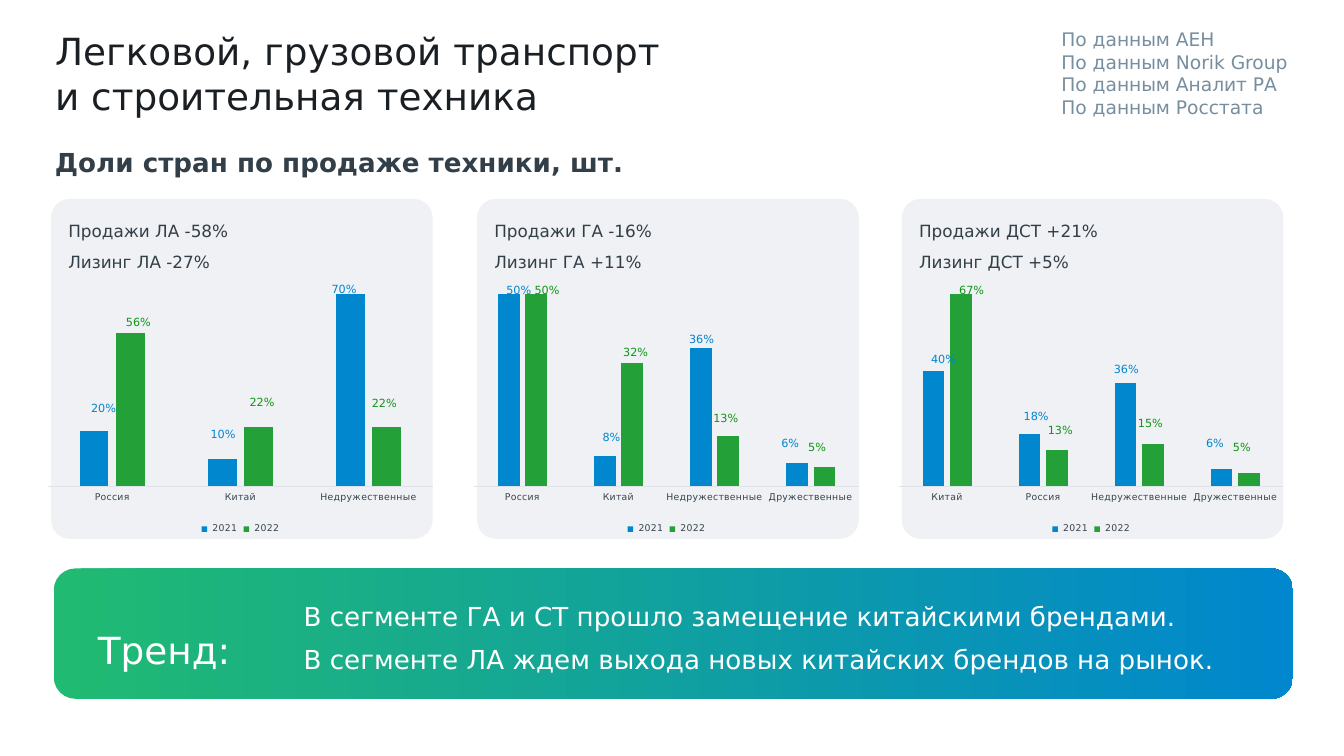
from dataclasses import dataclass

from lxml.etree import SubElement
from pptx import Presentation
from pptx.chart.data import CategoryChartData
from pptx.dml.color import RGBColor
from pptx.enum.chart import XL_CHART_TYPE, XL_LEGEND_POSITION, XL_TICK_LABEL_POSITION, XL_TICK_MARK
from pptx.enum.shapes import MSO_SHAPE
from pptx.enum.text import MSO_AUTO_SIZE, PP_ALIGN
from pptx.oxml.ns import qn
from pptx.util import Inches, Pt


@dataclass(frozen=True)
class Theme:
    font: str = "DejaVu Sans"
    chart_font: str = "Calibri"
    title: str = "1A1F24"
    body: str = "333F48"
    source: str = "778E9F"
    axis_text: str = "37444D"
    axis_line: str = "DDE3E7"
    panel: str = "EFF1F4"
    white: str = "FFFFFF"
    gradient: tuple = ("21BA72", "0087CD")
    bars: tuple = ("0087CD", "24A038")
    labels: tuple = ("0386CD", "119417")
    title_size: int = 20
    heading_size: int = 14
    source_size: int = 10
    chart_size: int = 10
    panel_size: int = 9
    label_size: int = 6
    axis_size: int = 5


@dataclass(frozen=True)
class Panel:
    left: float
    lines: tuple
    categories: tuple
    values: tuple
    shares: tuple
    label_tops: tuple
    chart_top: float
    columns: tuple


THEME = Theme()
YEARS = ("2021", "2022")
PANEL_TOP, PANEL_WIDTH, PANEL_HEIGHT = 1.48, 2.84, 2.53
CHART_WIDTH, CHART_BOTTOM = 2.98, 4.02
PLOT_TOP, PLOT_BASE = 2.19, 3.62
THREE_COLUMNS = ((0.39, 0.65, 0.73), (1.28, 1.57, 0.73), (2.18, 2.48, 0.73))
FOUR_COLUMNS = ((0.31, 0.52, 0.4), (1.0, 1.18, 0.73), (1.67, 1.85, 0.73), (2.33, 2.53, 0.4))

PANELS = (
    Panel(0.38, ("Продажи ЛА -58%", "Лизинг ЛА -27%"),
          ("Россия", "Китай", "Недружественные"),
          ((29, 14, 100), (80, 31, 31)),
          (("20%", "10%", "70%"), ("56%", "22%", "22%")),
          ((2.94, 3.13, 2.05), (2.3, 2.89, 2.9)), 1.96, THREE_COLUMNS),
    Panel(3.55, ("Продажи ГА -16%", "Лизинг ГА +11%"),
          ("Россия", "Китай", "Недружественные", "Дружественные"),
          ((100, 16, 72, 12), (100, 64, 26, 10)),
          (("50%", "8%", "36%", "6%"), ("50%", "32%", "13%", "5%")),
          ((2.06, 3.15, 2.42, 3.2), (2.06, 2.52, 3.01, 3.23)), 1.86, FOUR_COLUMNS),
    Panel(6.71, ("Продажи ДСТ +21%", "Лизинг ДСТ +5%"),
          ("Китай", "Россия", "Недружественные", "Дружественные"),
          ((60, 27, 54, 9), (100, 19, 22, 7)),
          (("40%", "18%", "36%", "6%"), ("67%", "13%", "15%", "5%")),
          ((2.57, 3.0, 2.65, 3.2), (2.06, 3.1, 3.05, 3.23)), 1.86, FOUR_COLUMNS),
)


def color(value):
    return RGBColor.from_string(value)


def style_font(font, size, value, name=THEME.font, bold=False):
    font.name, font.size, font.bold = name, Pt(size), bold
    font.color.rgb = color(value)


def add_text(slide, box, lines, size, value, bold=False, align=PP_ALIGN.LEFT,
             spacing=None, before=None, insets=None, soft_breaks=False):
    shape = slide.shapes.add_textbox(*map(Inches, box))
    frame = shape.text_frame
    frame.word_wrap = True
    frame.auto_size = MSO_AUTO_SIZE.SHAPE_TO_FIT_TEXT
    if insets:
        frame.margin_left = frame.margin_right = Inches(insets[0])
        frame.margin_top = frame.margin_bottom = Inches(insets[1])
    paragraph = frame.paragraphs[0]
    for index, line in enumerate(lines):
        if index and soft_breaks:
            paragraph.add_line_break()
        elif index:
            paragraph = frame.add_paragraph()
        paragraph.alignment = align
        if spacing:
            paragraph.line_spacing = spacing
        if before:
            paragraph.space_before = Pt(before)
        run = paragraph.add_run()
        run.text = line
        style_font(run.font, size, value, bold=bold)


def add_rounded(slide, box, fill, adjustment=None):
    shape = slide.shapes.add_shape(MSO_SHAPE.ROUNDED_RECTANGLE, *map(Inches, box))
    shape.shadow.inherit = False
    shape.line.fill.background()
    if adjustment:
        shape.adjustments[0] = adjustment
    if isinstance(fill, tuple):
        shape.fill.gradient()
        shape.fill.gradient_angle = 0
        for stop, value in zip(shape.fill.gradient_stops, fill):
            stop.color.rgb = color(value)
    else:
        shape.fill.solid()
        shape.fill.fore_color.rgb = color(fill)


def set_plot_area(chart, top, height):
    plot_area = chart._chartSpace.chart.plotArea
    layout = plot_area.find(qn("c:layout"))
    if layout is None:
        layout = SubElement(plot_area, qn("c:layout"))
        plot_area.insert(0, layout)
    manual = SubElement(layout, qn("c:manualLayout"))
    settings = {"layoutTarget": "inner", "xMode": "edge", "yMode": "edge",
                "x": 0.02, "y": top, "w": 0.96, "h": height}
    for name, value in settings.items():
        SubElement(manual, qn(f"c:{name}")).set("val", str(value))


def add_column_chart(slide, panel):
    data = CategoryChartData(number_format="General")
    data.categories = panel.categories
    for year, values in zip(YEARS, panel.values):
        data.add_series(year, values)
    height = CHART_BOTTOM - panel.chart_top
    box = (panel.left - 0.08, panel.chart_top, CHART_WIDTH, height)
    chart = slide.shapes.add_chart(
        XL_CHART_TYPE.COLUMN_CLUSTERED, *map(Inches, box), data).chart
    style_font(chart.font, THEME.chart_size, THEME.body, THEME.chart_font)
    chart.has_title = False
    chart.has_legend = True
    chart.legend.position = XL_LEGEND_POSITION.BOTTOM
    chart.legend.include_in_layout = False
    style_font(chart.legend.font, THEME.axis_size, THEME.axis_text)
    plot = chart.plots[0]
    plot.vary_by_categories = False
    plot.gap_width, plot.overlap = 219, -27
    for series, value in zip(plot.series, THEME.bars):
        series.format.fill.solid()
        series.format.fill.fore_color.rgb = color(value)
    value_axis = chart.value_axis
    value_axis.visible = False
    value_axis.has_major_gridlines = False
    value_axis.minimum_scale, value_axis.maximum_scale = 0, 100
    value_axis.tick_labels.number_format = "0%"
    value_axis.tick_labels.number_format_is_linked = False
    category_axis = chart.category_axis
    category_axis.major_tick_mark = XL_TICK_MARK.NONE
    category_axis.minor_tick_mark = XL_TICK_MARK.NONE
    category_axis.tick_label_position = XL_TICK_LABEL_POSITION.NEXT_TO_AXIS
    style_font(category_axis.tick_labels.font, THEME.axis_size, THEME.axis_text)
    category_axis.format.line.color.rgb = color(THEME.axis_line)
    category_axis.format.line.width = Pt(0.75)
    set_plot_area(chart, (PLOT_TOP - panel.chart_top) / height, (PLOT_BASE - PLOT_TOP) / height)


def add_panel(slide, panel):
    add_rounded(slide, (panel.left, PANEL_TOP, PANEL_WIDTH, PANEL_HEIGHT), THEME.panel, 0.056)
    add_text(slide, (panel.left + 0.03, 1.52, 2.18, 0.56), panel.lines,
             THEME.panel_size, THEME.body, spacing=1.5)
    add_column_chart(slide, panel)
    for year, value in enumerate(THEME.labels):
        for share, top, column in zip(panel.shares[year], panel.label_tops[year], panel.columns):
            width = column[2]
            add_text(slide, (panel.left + column[year] - width / 2, top, width, 0.2), (share,),
                     THEME.label_size, value, align=PP_ALIGN.CENTER, insets=(0, 0.05))


def add_trend(slide):
    add_rounded(slide, (0.4, 4.23, 9.22, 0.97), THEME.gradient)
    add_text(slide, (0.63, 4.62, 1.5, 0.44), ("Тренд:",), THEME.title_size, THEME.white)
    add_text(slide, (2.16, 4.42, 7.69, 0.66),
             ("В сегменте ГА и СТ прошло замещение китайскими брендами.",
              "В сегменте ЛА ждем выхода новых китайских брендов на рынок."),
             THEME.heading_size, THEME.white, before=6)


def main():
    presentation = Presentation()
    presentation.slide_width, presentation.slide_height = Inches(10), Inches(5.625)
    slide = presentation.slides.add_slide(presentation.slide_layouts[6])
    add_text(slide, (0.34, 0.17, 7.5, 0.75),
             ("Легковой, грузовой транспорт", "и строительная техника"),
             THEME.title_size, THEME.title, insets=(0.07, 0.04), soft_breaks=True)
    add_text(slide, (7.8, 0.16, 1.93, 0.94),
             ("По данным АЕН", "По данным Norik Group", "По данным Аналит РА",
              "По данным Росстата"), THEME.source_size, THEME.source)
    add_text(slide, (0.31, 0.92, 4.55, 0.45), ("Доли стран по продаже техники, шт.",),
             THEME.heading_size, THEME.body, bold=True, spacing=1.5)
    for panel in PANELS:
        add_panel(slide, panel)
    add_trend(slide)
    presentation.save("out.pptx")


if __name__ == "__main__":
    main()
